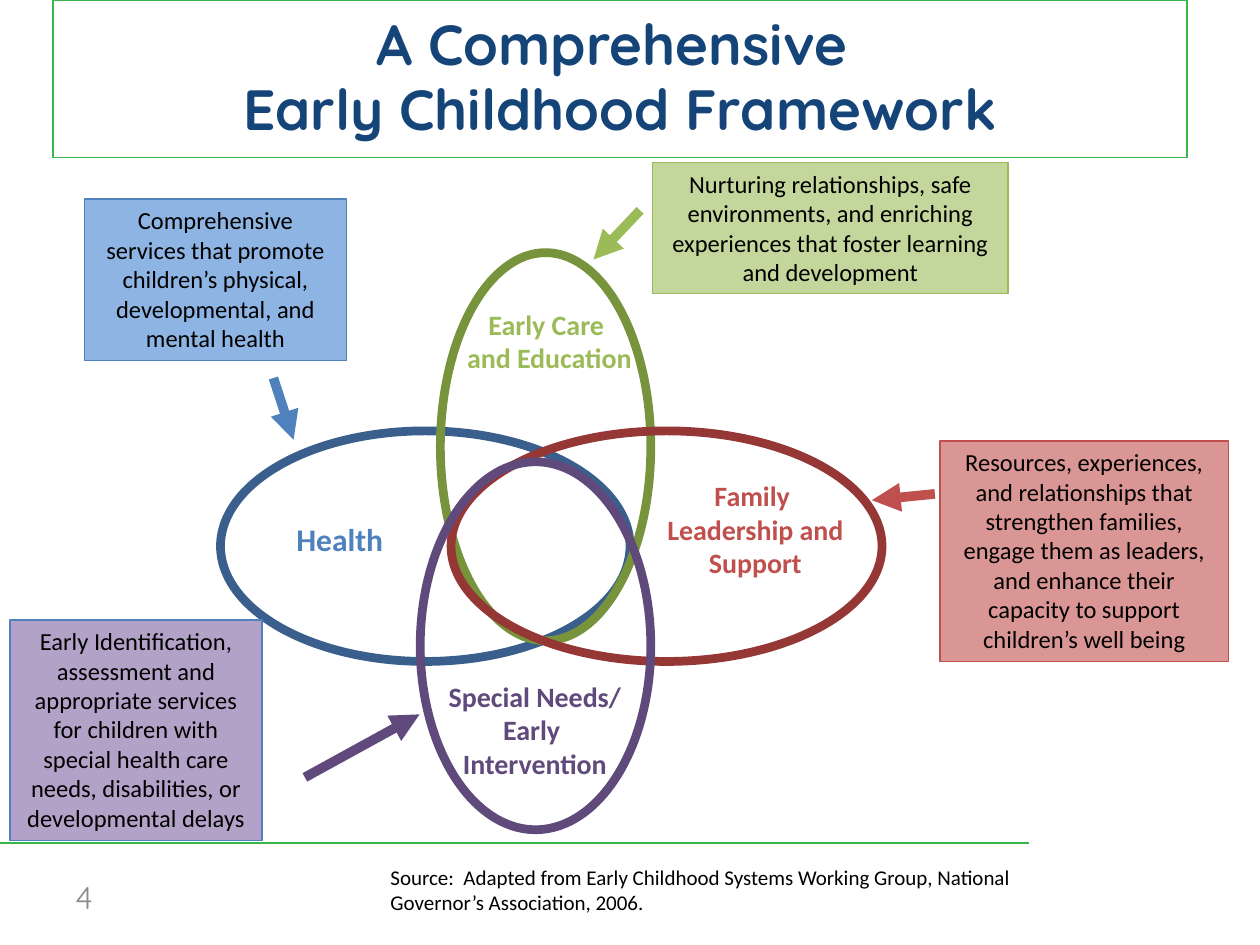
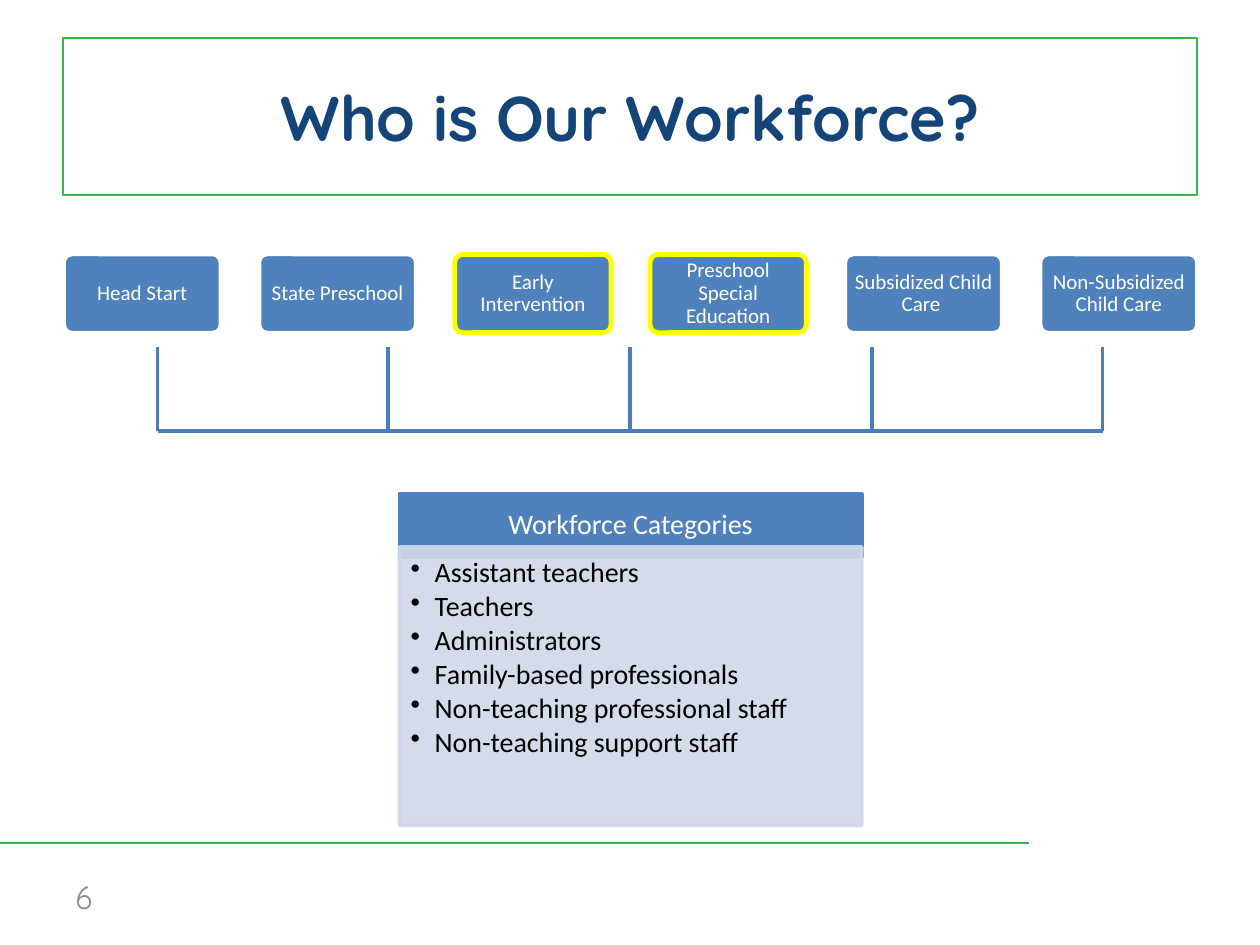
import lxml.etree
import pptx
import pptx.dml.color
import pptx.enum.shapes
import pptx.enum.text
import pptx.oxml.ns
import pptx.util

Inches = pptx.util.Inches
Pt = pptx.util.Pt
qn = pptx.oxml.ns.qn
SHAPE = pptx.enum.shapes.MSO_SHAPE
STRAIGHT = pptx.enum.shapes.MSO_CONNECTOR.STRAIGHT
ALIGN = pptx.enum.text.PP_ALIGN
ANCHOR = pptx.enum.text.MSO_ANCHOR

GREEN, NAVY, GREY = "39B54A", "154578", "8C8C8C"
BLUE, LIME, RED, PURPLE = "4F81BD", "9BBB59", "C0504D", "604A7B"
PALE_BLUE, YELLOW, BRANCH = "D0D8E8", "FFFF00", "4B7EBC"
BLACK, WHITE = "000000", "FFFFFF"


def paint(fill, colour):
    """Give a shape, line or font fill a solid colour, or none at all."""
    if colour is None:
        fill.background()
    else:
        fill.solid()
        fill.fore_color.rgb = pptx.dml.color.RGBColor.from_string(colour)


def write(shape, lines, size, colour, font="Calibri", bold=False, align=ALIGN.CENTER,
          anchor=ANCHOR.TOP, insets=(0.1, 0.05, 0.1, 0.05), spacing=1.0, after=0):
    """Fill a shape with one paragraph per line; a vertical tab breaks a line."""
    frame = shape.text_frame
    frame.word_wrap = True
    frame.auto_size = pptx.enum.text.MSO_AUTO_SIZE.NONE
    frame.vertical_anchor = anchor
    frame.margin_left, frame.margin_top, frame.margin_right, frame.margin_bottom = map(Inches, insets)
    for index, line in enumerate(lines):
        para = frame.add_paragraph() if index else frame.paragraphs[0]
        para.alignment = align
        para.line_spacing = spacing
        para.space_before = Pt(0)
        para.space_after = Pt(after)
        for part_index, part in enumerate(line.split("\v")):
            if part_index:
                para.add_line_break()
            span = para.add_run()
            span.text = part
            span.font.name = font
            span.font.size = Pt(size)
            span.font.bold = bold
            paint(span.font.fill, colour)


deck = pptx.Presentation()
deck.slide_width = Inches(10)
deck.slide_height = Inches(7.5)

# Shared frame: title box, green rule and page number
pages = [
    ("A Comprehensive \vEarly Childhood Framework", 0.42, 0, 32.4, 0.95, "4"),
    ("Who is Our Workforce?", 0.5, 0.3, 36, 1.0, "6"),
]
for heading, left, top, size, spacing, number in pages:
    slide = deck.slides.add_slide(deck.slide_layouts[5])
    title = slide.shapes.title
    title.left, title.top, title.width, title.height = map(Inches, (left, top, 9, 1.25))
    paint(title.line.fill, GREEN)
    title.line.width = Pt(1)
    write(title, [heading], size, NAVY, "Quicksand", bold=True, anchor=ANCHOR.MIDDLE, spacing=spacing)

    rule = slide.shapes.add_connector(STRAIGHT, 0, Inches(6.69), Inches(8.17), Inches(6.69))
    paint(rule.line.fill, GREEN)
    rule.line.width = Pt(1.5)

    page_number = slide.shapes.add_textbox(Inches(0.5), Inches(6.92), Inches(2.33), Inches(0.4))
    write(page_number, [number], 18, GREY, "Quicksand", align=ALIGN.LEFT, anchor=ANCHOR.MIDDLE)

framework, workforce = deck.slides

# Framework: four overlapping ellipses
ellipses = [
    ((1.75, 3.42, 3.25, 1.83), 0, "3A5F8C"),
    ((2.79, 2.71, 3.08, 1.67), 90, "77933C"),
    ((3.58, 3.42, 3.42, 1.83), 0, "953735"),
    ((2.79, 4.21, 2.92, 1.83), 90, PURPLE),
]
for place, turn, colour in ellipses:
    ellipse = framework.shapes.add_shape(SHAPE.OVAL, *map(Inches, place))
    ellipse.rotation = turn
    paint(ellipse.fill, None)
    paint(ellipse.line.fill, colour)
    ellipse.line.width = Pt(5)

labels = [
    ((3.22, 2.39, 2.28, 0.63), ["Early Care ", "and Education"], 16, LIME),
    ((1.67, 4.08, 2.11, 0.4), ["Health "], 18, BLUE),
    ((4.92, 3.75, 2.15, 0.91), ["Family ", "Leadership and Support"], 16, RED),
    ((3.17, 5.34, 2.15, 0.91), ["Special Needs/", "Early ", "Intervention"], 16, PURPLE),
]
for place, lines, size, colour in labels:
    label = framework.shapes.add_textbox(*map(Inches, place))
    write(label, lines, size, colour, bold=True)

callouts = [
    ((0.67, 1.58, 2.08, 1.28), "8EB4E3", BLUE,
     "Comprehensive services that promote children’s physical, developmental, and mental health"),
    ((5.18, 1.29, 2.82, 1.04), "C3D69B", LIME,
     "Nurturing relationships, safe environments, and enriching experiences that foster "
     "learning and development"),
    ((7.46, 3.5, 2.29, 1.75), "D99694", RED,
     "Resources, experiences, and relationships that strengthen families, engage them as "
     "leaders, and enhance their capacity to support children’s well being"),
    ((0.08, 4.92, 2, 1.75), "B3A2C7", BLUE,
     "Early Identification, assessment and appropriate services for children with special "
     "health care needs, disabilities, or developmental delays"),
]
for place, fill, outline, text in callouts:
    callout = framework.shapes.add_shape(SHAPE.RECTANGLE, *map(Inches, place))
    paint(callout.fill, fill)
    paint(callout.line.fill, outline)
    callout.line.width = Pt(0.75)
    write(callout, [text], 14, BLACK)

arrows = [
    ((2.17, 3, 2.33, 3.49), BLUE),
    ((5.08, 1.67, 4.71, 2.06), LIME),
    ((7.42, 3.92, 6.92, 3.97), RED),
    ((2.42, 6.17, 3.33, 5.67), PURPLE),
]
for ends, colour in arrows:
    arrow = framework.shapes.add_connector(STRAIGHT, *map(Inches, ends))
    paint(arrow.line.fill, colour)
    arrow.line.width = Pt(5.5)
    lxml.etree.SubElement(arrow.element.spPr.find(qn("a:ln")), qn("a:tailEnd"), type="triangle")

source = framework.shapes.add_textbox(Inches(3), Inches(6.81), Inches(5.25), Inches(0.5))
write(source, ["Source:  Adapted from Early Childhood Systems Working Group, National "
               "Governor’s Association, 2006."], 12, BLACK, align=ALIGN.LEFT)

# Workforce: six programs in a row, two of them highlighted
programs = ["Head Start", "State Preschool", "Early Intervention", "Preschool Special Education",
            "Subsidized Child Care ", "Non-Subsidized Child Care"]
highlighted = programs[2:4]
for index, name in enumerate(programs):
    program = workforce.shapes.add_shape(
        SHAPE.ROUNDED_RECTANGLE, Inches(0.51 + index * 1.55), Inches(2.02), Inches(1.24), Inches(0.62))
    program.adjustments[0] = 0.1
    paint(program.fill, BLUE)
    paint(program.line.fill, YELLOW if name in highlighted else WHITE)
    program.line.width = Pt(2.75 if name in highlighted else 2)
    write(program, [name], 12, WHITE, anchor=ANCHOR.MIDDLE, insets=(0.03, 0.02, 0.03, 0.02), spacing=0.9)

# Bracket that gathers the programs
branches = [(x, 2.75, x, 3.42) for x in (1.25, 3.08, 5, 6.92, 8.75)]
for ends in branches + [(1.25, 3.42, 8.75, 3.42)]:
    branch = workforce.shapes.add_connector(STRAIGHT, *map(Inches, ends))
    paint(branch.line.fill, BRANCH)
    branch.line.width = Pt(2)

# Category panel
panel = []
for top, height, colour in [(3.92, 0.5, BLUE), (4.34, 2.21, PALE_BLUE)]:
    part = workforce.shapes.add_shape(
        SHAPE.RECTANGLE, Inches(3.17), Inches(top), Inches(3.67), Inches(height))
    paint(part.fill, colour)
    paint(part.line.fill, colour)
    part.line.width = Pt(2)
    panel.append(part)
panel_header, panel_body = panel

write(panel_header, ["Workforce Categories"], 16, WHITE, anchor=ANCHOR.MIDDLE,
      insets=(0.12, 0.07, 0.12, 0.07), spacing=0.9)
categories = ["Assistant teachers", "Teachers", "Administrators", "Family-based professionals",
              "Non-teaching professional staff", "Non-teaching support staff"]
write(panel_body, categories, 16, BLACK, align=ALIGN.LEFT,
      insets=(0.09, 0.09, 0.12, 0.14), spacing=0.9, after=2.2)
for para in panel_body.text_frame.paragraphs:
    properties = para._p.get_or_add_pPr()
    properties.set("marL", str(Inches(0.19)))
    properties.set("indent", str(Inches(-0.19)))
    lxml.etree.SubElement(properties, qn("a:buChar"), char="•")
for tint in panel_body.element.spPr.iter(qn("a:srgbClr")):
    lxml.etree.SubElement(tint, qn("a:alpha"), val="90000")

# No shadows anywhere
for slide in deck.slides:
    for shape in slide.shapes:
        lxml.etree.SubElement(shape.element.spPr, qn("a:effectLst"))

deck.save("out.pptx")
